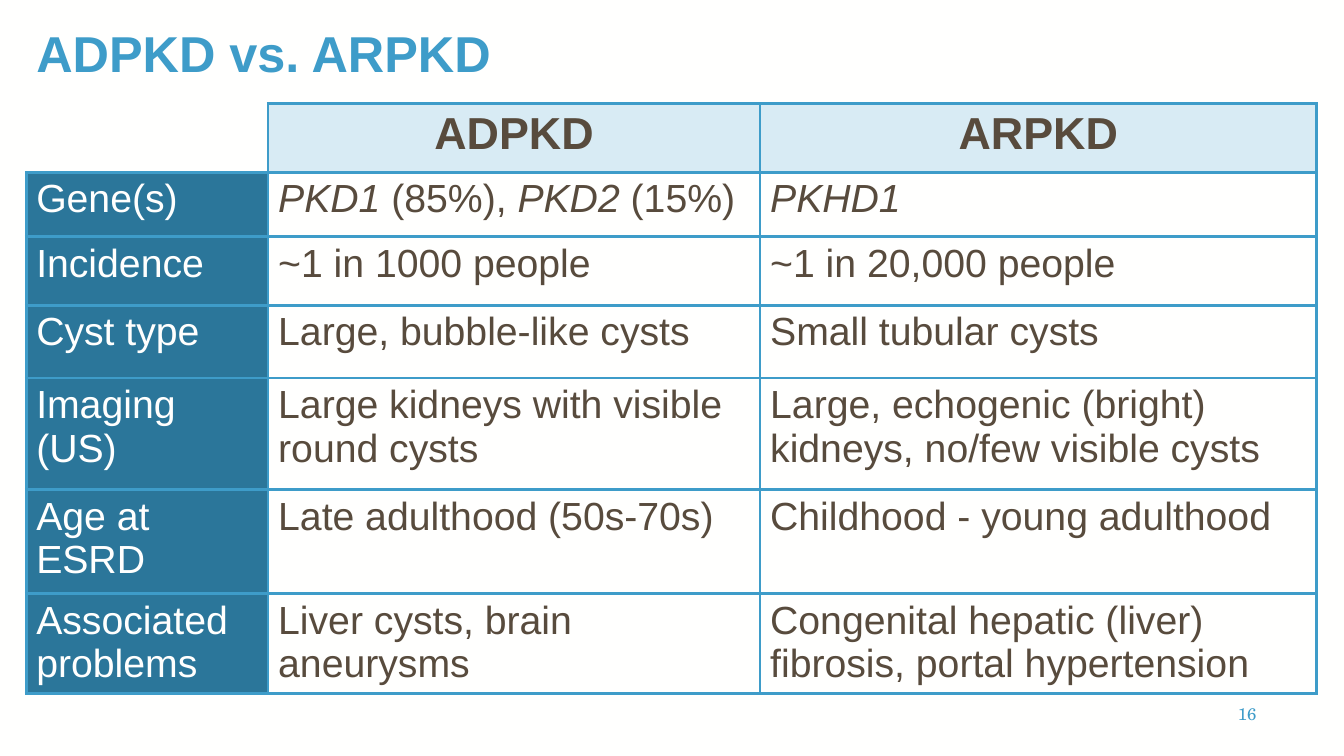
from dataclasses import dataclass

from lxml import etree
from pptx import Presentation
from pptx.dml.color import RGBColor
from pptx.enum.text import MSO_ANCHOR, PP_ALIGN
from pptx.oxml.ns import qn
from pptx.util import Inches, Length, Pt

LEFT, CENTER, RIGHT = PP_ALIGN.LEFT, PP_ALIGN.CENTER, PP_ALIGN.RIGHT
MIDDLE = MSO_ANCHOR.MIDDLE
SLIDE_WIDTH, SLIDE_HEIGHT = Inches(13.33), Inches(7.5)
TITLE_ONLY = 5


@dataclass(frozen=True)
class Theme:
    paper: str = "FFFFFE"
    accent: str = "3E9CC9"
    ink: str = "584B3D"
    header_fill: str = "D8EBF4"
    label_fill: str = "2B769A"
    body_font: str = "Arial"
    number_font: str = "TeX Gyre Schola"
    title_size: int = 36
    header_size: int = 32
    body_size: int = 28
    number_size: int = 12
    border: float = 2.25
    thin_border: float = 1


THEME = Theme()


@dataclass(frozen=True)
class Area:
    left: float
    top: float
    width: float
    height: float

    def lengths(self) -> tuple[Length, Length, Length, Length]:
        return across(self.left), down(self.top), across(self.width), down(self.height)


@dataclass(frozen=True)
class Style:
    size: float
    color: str
    font: str = THEME.body_font
    bold: bool = False
    align: PP_ALIGN = LEFT


@dataclass(frozen=True)
class Span:
    text: str
    italic: bool = False


@dataclass(frozen=True)
class Feature:
    label: str
    dominant: tuple[Span, ...]
    recessive: tuple[Span, ...]
    height: float


TITLE_AREA = Area(1.95, 0, 82.52, 14.93)
NUMBER_AREA = Area(73.37, 91.07, 20.86, 6.67)
TABLE_LEFT, TABLE_TOP = 1.95, 13.73
COLUMN_WIDTHS = (18, 36.61, 41.41)
HEADER_HEIGHT = 9.07

TITLE_STYLE = Style(THEME.title_size, THEME.accent, bold=True)
HEADER_STYLE = Style(THEME.header_size, THEME.ink, bold=True, align=CENTER)
LABEL_STYLE = Style(THEME.body_size, THEME.paper)
BODY_STYLE = Style(THEME.body_size, THEME.ink)
NUMBER_STYLE = Style(THEME.number_size, THEME.accent, THEME.number_font, align=RIGHT)

HEADERS = ("", "ADPKD", "ARPKD")
FEATURES = (
    Feature("Gene(s)",
            (Span("PKD1 ", True), Span("(85%), "), Span("PKD2", True), Span(" (15%)")),
            (Span("PKHD1", True),), 8.53),
    Feature("Incidence", (Span("~1 in 1000 people"),),
            (Span("~1 in 20,000 people"),), 9.07),
    Feature("Cyst type", (Span("Large, bubble-like cysts"),),
            (Span("Small tubular cysts"),), 9.6),
    Feature("Imaging (US)", (Span("Large kidneys with visible round cysts"),),
            (Span("Large, echogenic (bright) kidneys, no/few visible cysts"),), 14.8),
    Feature("Age at ESRD", (Span("Late adulthood (50s-70s)"),),
            (Span("Childhood - young adulthood"),), 13.73),
    Feature("Associated problems", (Span("Liver cysts, brain aneurysms"),),
            (Span("Congenital hepatic (liver) fibrosis, portal hypertension"),), 13.2),
)


def across(percent: float) -> Length:
    return Length(round(SLIDE_WIDTH * percent / 100))


def down(percent: float) -> Length:
    return Length(round(SLIDE_HEIGHT * percent / 100))


def write(frame, spans: tuple[Span, ...], style: Style) -> None:
    para = frame.paragraphs[0]
    para.alignment = style.align
    para.space_before = Pt(0)
    font = para.font
    font.name, font.size, font.bold = style.font, Pt(style.size), style.bold
    font.color.rgb = RGBColor.from_string(style.color)
    for span in spans:
        run = para.add_run()
        run.text = span.text
        if span.italic:
            run.font.italic = True


def set_borders(cell, corner: bool) -> None:
    properties = cell._tc.get_or_add_tcPr()
    for position, side in enumerate("LRTB"):
        hidden = corner and side in "LT"
        width = THEME.thin_border if hidden else THEME.border
        line = etree.Element(qn(f"a:ln{side}"), w=str(Pt(width)))
        fill = etree.SubElement(line, qn("a:solidFill"))
        etree.SubElement(fill, qn("a:srgbClr"), val=THEME.paper if hidden else THEME.accent)
        properties.insert(position, line)


def fill_cell(cell, spans: tuple[Span, ...], style: Style, fill: str, corner: bool = False) -> None:
    cell.fill.solid()
    cell.fill.fore_color.rgb = RGBColor.from_string(fill)
    set_borders(cell, corner)
    write(cell.text_frame, spans, style)


def add_title(page, text: str) -> None:
    title = page.shapes.title
    title.left, title.top, title.width, title.height = TITLE_AREA.lengths()
    title.text_frame.vertical_anchor = MIDDLE
    write(title.text_frame, (Span(text),), TITLE_STYLE)
    title.text_frame.paragraphs[0].line_spacing = 0.9


def add_comparison(page) -> None:
    heights = (HEADER_HEIGHT, *(feature.height for feature in FEATURES))
    area = Area(TABLE_LEFT, TABLE_TOP, sum(COLUMN_WIDTHS), sum(heights))
    table = page.shapes.add_table(len(heights), len(COLUMN_WIDTHS), *area.lengths()).table
    table.first_row = table.horz_banding = False
    for column, width in zip(table.columns, COLUMN_WIDTHS):
        column.width = across(width)
    for row, height in zip(table.rows, heights):
        row.height = down(height)
    for index, header in enumerate(HEADERS):
        spans = (Span(header),) if header else ()
        fill = THEME.header_fill if header else THEME.paper
        fill_cell(table.cell(0, index), spans, HEADER_STYLE, fill, corner=not header)
    for index, feature in enumerate(FEATURES, 1):
        fill_cell(table.cell(index, 0), (Span(feature.label),), LABEL_STYLE, THEME.label_fill)
        for column, spans in enumerate((feature.dominant, feature.recessive), 1):
            fill_cell(table.cell(index, column), spans, BODY_STYLE, THEME.paper)


def add_page_number(page, number: str) -> None:
    box = page.shapes.add_textbox(*NUMBER_AREA.lengths())
    box.text_frame.word_wrap = True
    box.text_frame.vertical_anchor = MIDDLE
    write(box.text_frame, (Span(number),), NUMBER_STYLE)


def main() -> None:
    deck = Presentation()
    deck.slide_width, deck.slide_height = SLIDE_WIDTH, SLIDE_HEIGHT
    page = deck.slides.add_slide(deck.slide_layouts[TITLE_ONLY])
    page.background.fill.solid()
    page.background.fill.fore_color.rgb = RGBColor.from_string(THEME.paper)
    add_title(page, "ADPKD vs. ARPKD")
    add_comparison(page)
    add_page_number(page, "16")
    deck.save("out.pptx")


if __name__ == "__main__":
    main()
